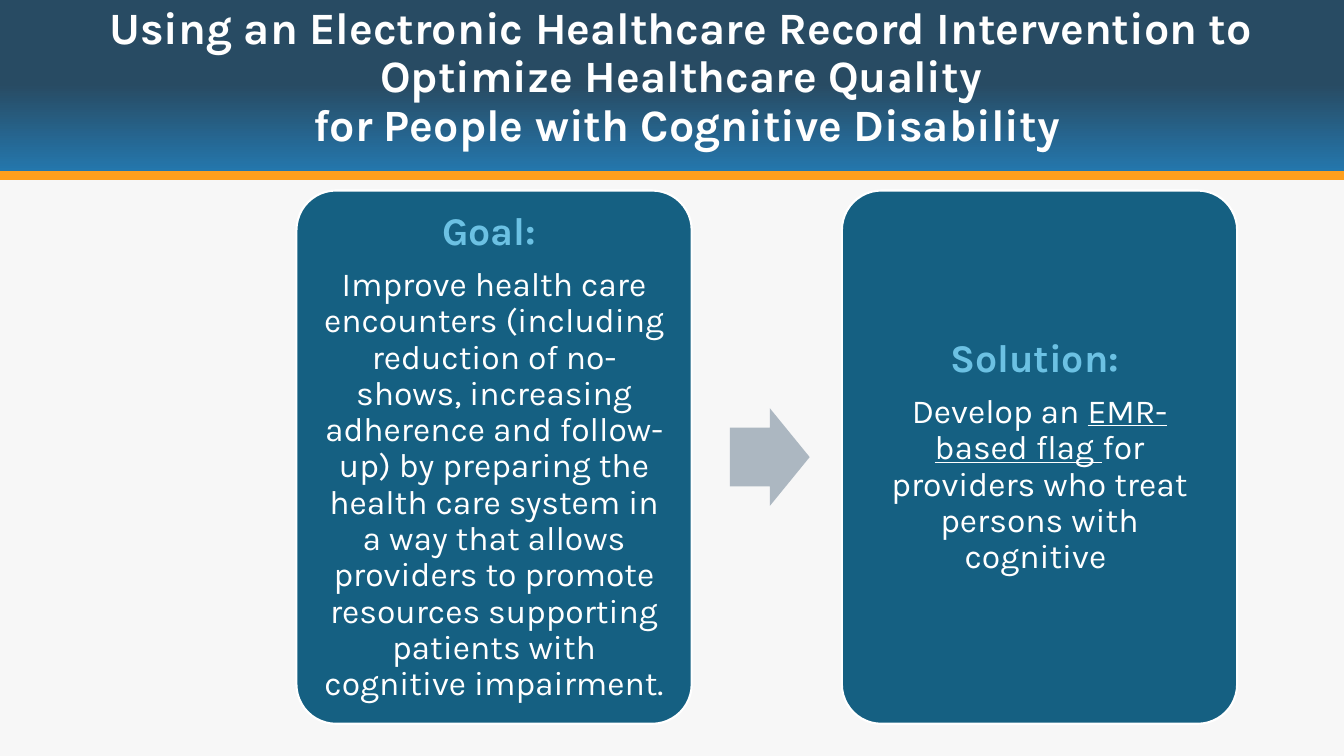
from dataclasses import dataclass

from lxml.etree import SubElement
from pptx import Presentation
from pptx.dml.color import RGBColor
from pptx.enum.shapes import MSO_CONNECTOR, MSO_SHAPE
from pptx.enum.text import MSO_ANCHOR, PP_ALIGN
from pptx.oxml.ns import qn
from pptx.util import Inches, Pt

WHITE = RGBColor(0xFF, 0xFF, 0xFF)
PAPER = RGBColor(0xF7, 0xF7, 0xF7)
NAVY = RGBColor(0x28, 0x4B, 0x63)
BLUE = RGBColor(0x24, 0x79, 0xB0)
ORANGE = RGBColor(0xFF, 0x9F, 0x1C)
TEAL = RGBColor(0x15, 0x60, 0x82)
SKY = RGBColor(0x6C, 0xC1, 0xE3)
GREY = RGBColor(0xAC, 0xB7, 0xC1)

FONT = "Karla"
SLIDE_W, SLIDE_H = 13.33, 7.5
BANNER_H = 1.74
CARD_TOP, CARD_W, CARD_H = 1.89, 3.92, 5.29
ARROW_W, ARROW_H = 0.79, 0.97


@dataclass
class Span:
    text: str
    underline: bool = False


@dataclass
class Card:
    left: float
    heading: str
    body: list[Span]


TITLE = [
    "Using an Electronic Healthcare Record Intervention to ",
    "Optimize Healthcare Quality ",
    "for People with Cognitive Disability",
]
CARDS = [
    Card(2.94, "Goal: ", [Span(
        "Improve health care encounters (including reduction of no-shows, "
        "increasing adherence and follow-up) by preparing the health care "
        "system in a way that allows providers to promote resources "
        "supporting patients with cognitive impairment.")]),
    Card(8.35, "Solution: ", [
        Span("Develop an "),
        Span("EMR-based flag ", underline=True),
        Span("for providers who treat persons with cognitive ")]),
]


def add_run(p, text: str, *, size: float, color: RGBColor = WHITE,
            bold: bool = False, underline: bool = False) -> None:
    r = p.add_run()
    r.text = text
    r.font.name = FONT
    r.font.size = Pt(size)
    r.font.bold = bold
    r.font.underline = underline
    r.font.color.rgb = color


def format_paragraph(p, space_after: float = 0) -> None:
    p.alignment = PP_ALIGN.CENTER
    p.line_spacing = 0.9
    p.space_after = Pt(space_after)


def add_block(s, kind: MSO_SHAPE, left: float, top: float, width: float,
              height: float, fill: RGBColor | None = None):
    sp = s.shapes.add_shape(kind, Inches(left), Inches(top),
                            Inches(width), Inches(height))
    sp.shadow.inherit = False
    sp.line.fill.background()
    if fill is not None:
        sp.fill.solid()
        sp.fill.fore_color.rgb = fill
    return sp


def add_banner(s) -> None:
    sp = add_block(s, MSO_SHAPE.RECTANGLE, 0, 0, SLIDE_W, BANNER_H)
    sp.fill.gradient()
    sp.fill.gradient_angle = 270
    stops = zip(sp.fill.gradient_stops, (0.48, 1), (NAVY, BLUE))
    for stop, position, color in stops:
        stop.position = position
        stop.color.rgb = color

    rule = s.shapes.add_connector(MSO_CONNECTOR.STRAIGHT, 0, Inches(BANNER_H),
                                  Inches(SLIDE_W), Inches(BANNER_H))
    rule.line.color.rgb = ORANGE
    rule.line.width = Pt(6)
    SubElement(rule.element.spPr, qn("a:effectLst"))


def add_title(s) -> None:
    box = s.shapes.add_textbox(Inches(0.68), Inches(0.05),
                               Inches(12.27), Inches(1.45))
    tf = box.text_frame
    tf.word_wrap = True
    tf.vertical_anchor = MSO_ANCHOR.MIDDLE
    p = tf.paragraphs[0]
    format_paragraph(p)
    for i, line in enumerate(TITLE):
        if i:
            p.add_line_break()
        add_run(p, line, size=32, bold=True)


def add_card(s, card: Card) -> None:
    sp = add_block(s, MSO_SHAPE.ROUNDED_RECTANGLE, card.left, CARD_TOP,
                   CARD_W, CARD_H, TEAL)
    sp.adjustments[0] = 0.1
    sp.line.color.rgb = WHITE
    sp.line.width = Pt(1.5)

    tf = sp.text_frame
    tf.word_wrap = True
    tf.vertical_anchor = MSO_ANCHOR.MIDDLE
    tf.margin_left = tf.margin_right = Inches(0.12)
    tf.margin_top = tf.margin_bottom = Inches(0.12)
    p = tf.paragraphs[0]
    format_paragraph(p, space_after=9.8)
    add_run(p, card.heading, size=28, color=SKY, bold=True)
    p = tf.add_paragraph()
    format_paragraph(p, space_after=8.4)
    for span in card.body:
        add_run(p, span.text, size=24, underline=span.underline)


def main() -> None:
    prs = Presentation()
    prs.slide_width, prs.slide_height = Inches(SLIDE_W), Inches(SLIDE_H)
    s = prs.slides.add_slide(prs.slide_layouts[6])
    s.background.fill.solid()
    s.background.fill.fore_color.rgb = PAPER

    # Header
    add_banner(s)
    add_title(s)

    # Goal and solution cards
    for card in CARDS:
        add_card(s, card)

    # Arrow between the cards
    arrow = add_block(s, MSO_SHAPE.RIGHT_ARROW, 7.24,
                      CARD_TOP + (CARD_H - ARROW_H) / 2, ARROW_W, ARROW_H, GREY)
    arrow.adjustments[0] = 0.6
    arrow.adjustments[1] = 0.5

    prs.save("out.pptx")


if __name__ == "__main__":
    main()
